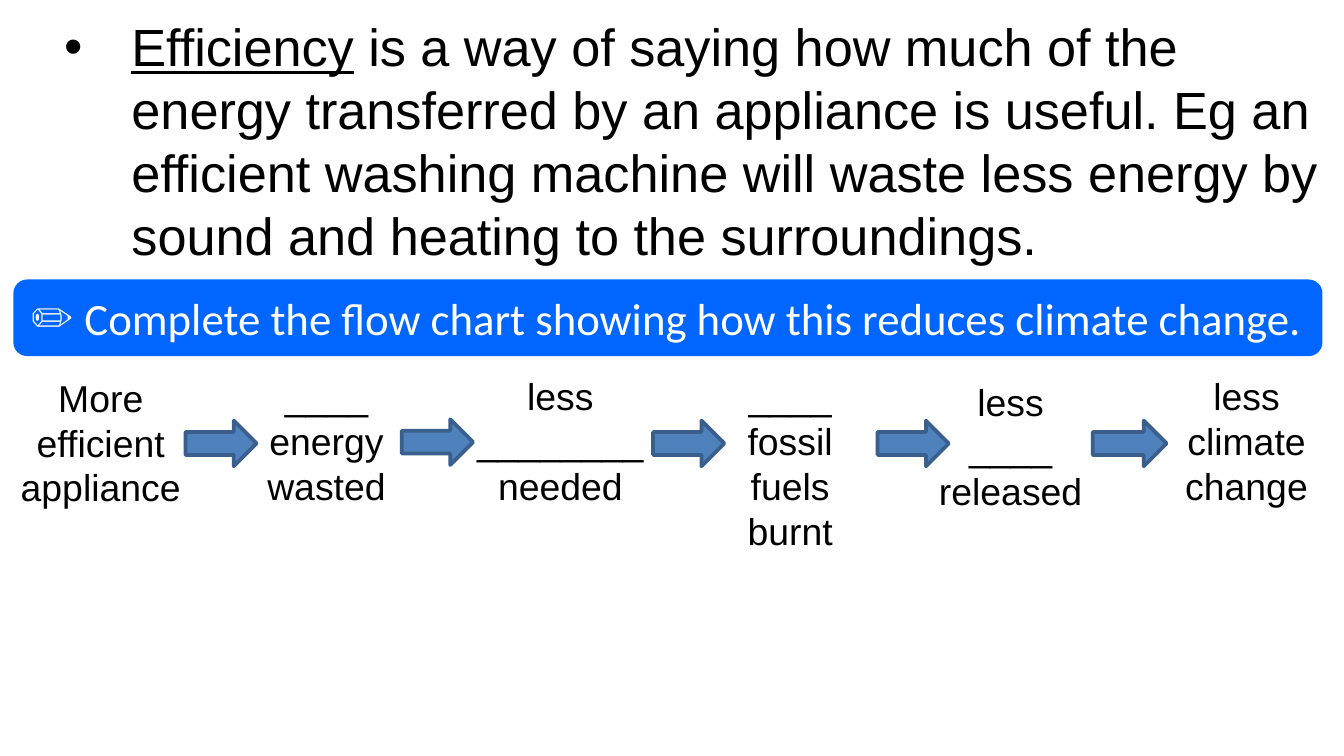
from typing import NamedTuple

from lxml.etree import SubElement
from pptx import Presentation
from pptx.dml.color import RGBColor
from pptx.enum.shapes import MSO_SHAPE as Shape
from pptx.enum.text import MSO_ANCHOR as Anchor, MSO_AUTO_SIZE as AutoSize, PP_ALIGN as Align
from pptx.oxml.ns import qn
from pptx.util import Pt

PX = 9144
BLACK = RGBColor(0x00, 0x00, 0x00)
WHITE = RGBColor(0xFF, 0xFF, 0xFF)
BLUE = RGBColor(0x00, 0x66, 0xFF)
STEEL = RGBColor(0x4F, 0x81, 0xBD)
STEEL_DARK = RGBColor(0x3A, 0x5F, 0x8C)


class Box(NamedTuple):
    x: int
    y: int
    w: int
    h: int

    def emu(self) -> list[int]:
        return [v * PX for v in self]


class Step(NamedTuple):
    text: str
    box: Box


STEPS = [
    Step("More efficient appliance", Box(0, 274, 150, 111)),
    Step("____ energy wasted", Box(171, 273, 144, 111)),
    Step("less ________ needed", Box(345, 273, 144, 111)),
    Step("____ fossil fuels burnt", Box(516, 273, 144, 145)),
    Step("less ____ released", Box(688, 277, 128, 111)),
    Step("less climate change", Box(855, 273, 145, 111)),
]
ARROWS = [
    Box(138, 313, 53, 34),
    Box(299, 312, 53, 34),
    Box(486, 313, 53, 34),
    Box(653, 313, 53, 34),
    Box(813, 313, 55, 34),
]


def style(p, font: str, size: int, color: RGBColor) -> None:
    for r in p.runs:
        r.font.name = font
        r.font.size = Pt(size)
        r.font.color.rgb = color


def set_bullet(p, char: str, left: int, hanging: int) -> None:
    pPr = p._p.get_or_add_pPr()
    pPr.set("marL", str(left * PX))
    pPr.set("indent", str(-hanging * PX))
    SubElement(pPr, qn("a:buFont")).set("typeface", "Arial")
    SubElement(pPr, qn("a:buChar")).set("char", char)


def add_text(s, box: Box):
    tf = s.shapes.add_textbox(*box.emu()).text_frame
    tf.word_wrap = True
    tf.auto_size = AutoSize.SHAPE_TO_FIT_TEXT
    return tf


def add_shape(s, kind: Shape, box: Box, fill: RGBColor):
    sp = s.shapes.add_shape(kind, *box.emu())
    sp.shadow.inherit = False
    sp.fill.solid()
    sp.fill.fore_color.rgb = fill
    return sp


def add_definition(s) -> None:
    p = add_text(s, Box(0, 6, 994, 199)).paragraphs[0]
    term, rest = p.add_run(), p.add_run()
    term.text = "Efficiency"
    rest.text = (
        " is a way of saying how much of the energy transferred by an appliance"
        " is useful. Eg an efficient washing machine will waste less energy by"
        " sound and heating to the surroundings."
    )
    p.level = 1
    set_bullet(p, "•", 88, 50)
    style(p, "Arial", 28, BLACK)
    term.font.underline = True


def add_step(s, step: Step) -> None:
    p = add_text(s, step.box).paragraphs[0]
    p.text = step.text
    p.alignment = Align.CENTER
    style(p, "Arial", 20, BLACK)


def add_arrow(s, box: Box) -> None:
    sp = add_shape(s, Shape.RIGHT_ARROW, box, STEEL)
    sp.line.color.rgb = STEEL_DARK
    sp.line.width = Pt(2)


def add_task(s) -> None:
    sp = add_shape(s, Shape.ROUNDED_RECTANGLE, Box(10, 208, 974, 57), BLUE)
    sp.adjustments[0] = 0.18
    sp.line.fill.background()
    tf = sp.text_frame
    tf.word_wrap = True
    tf.vertical_anchor = Anchor.MIDDLE
    p = tf.paragraphs[0]
    p.text = "Complete the flow chart showing how this reduces climate change."
    p.alignment = Align.LEFT
    set_bullet(p, "✏", 40, 40)
    style(p, "Calibri", 24, WHITE)


def main() -> None:
    prs = Presentation()
    prs.slide_width = 1000 * PX
    prs.slide_height = prs.slide_width * 9 // 16
    s = prs.slides.add_slide(prs.slide_layouts[6])
    add_definition(s)
    for step in STEPS:
        add_step(s, step)
    for arrow in ARROWS:
        add_arrow(s, arrow)
    add_task(s)
    prs.save("out.pptx")


if __name__ == "__main__":
    main()
